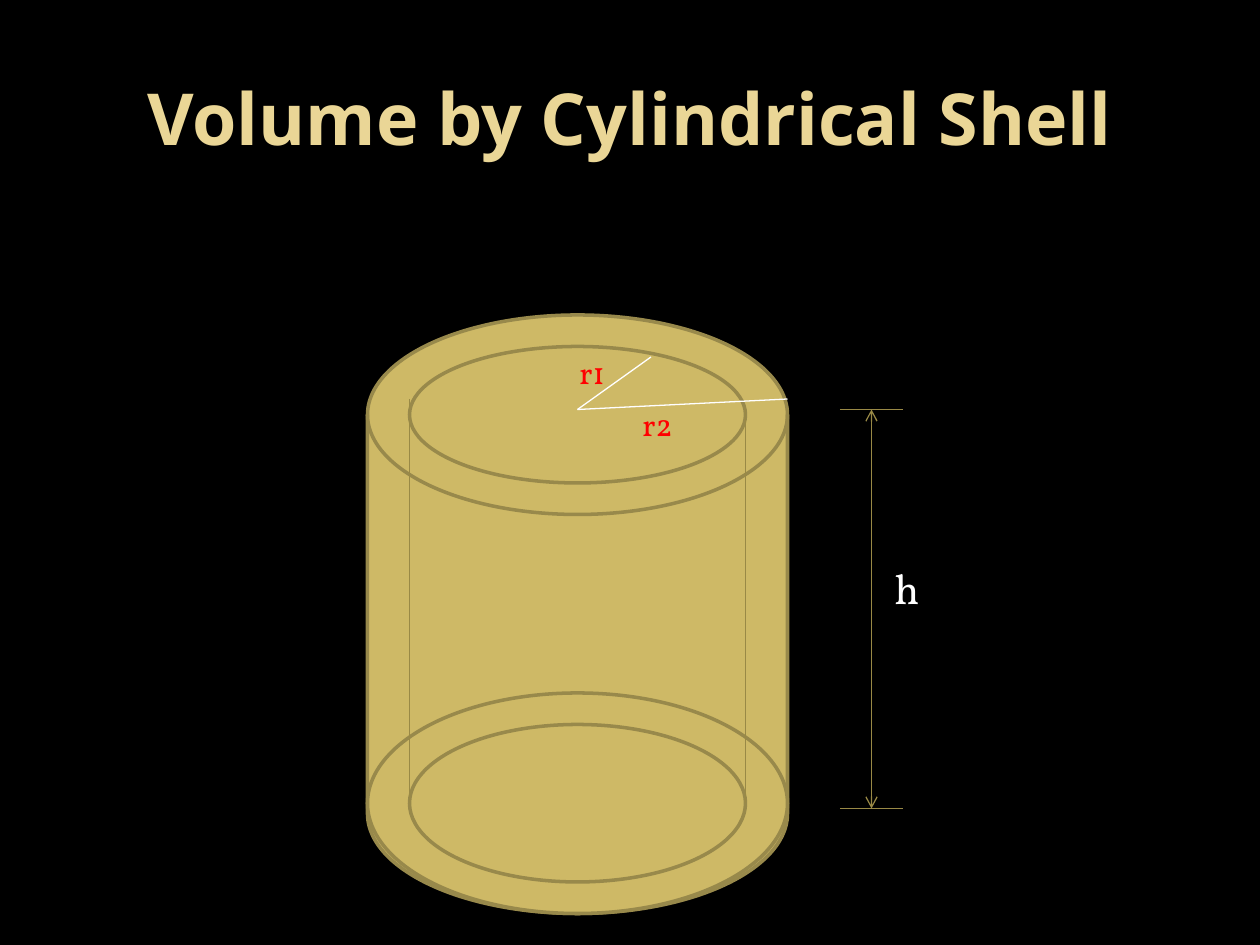
from lxml import etree
from pptx import Presentation
from pptx import util as u
from pptx.dml import color
from pptx.enum import shapes, text
from pptx.oxml import ns

Pt = u.Pt
COLORS = {
    "background": "000000",
    "title": "EAD696",
    "body": "CEB966",
    "outline": "98894B",
    "guide": "998946",
    "white": "FFFFFF",
    "radius": "FF0000",
}


def rgb(name):
    return color.RGBColor.from_string(COLORS[name])


def style_text(frame, size, font_name, color_name, bold=False):
    for paragraph in frame.paragraphs:
        for run in paragraph.runs:
            run.font.size = Pt(size)
            run.font.name = font_name
            run.font.bold = bold
            run.font.color.rgb = rgb(color_name)


def add_solid(slide, kind, left, top, width, height):
    shape = slide.shapes.add_shape(kind, Pt(left), Pt(top), Pt(width), Pt(height))
    shape.shadow.inherit = False
    shape.fill.solid()
    shape.fill.fore_color.rgb = rgb("body")
    shape.line.color.rgb = rgb("outline")
    shape.line.width = Pt(2)


def add_line(slide, start, end, color_name="guide", arrows=False):
    connector = slide.shapes.add_connector(
        shapes.MSO_CONNECTOR.STRAIGHT, *(Pt(value) for value in (*start, *end)))
    connector.line.color.rgb = rgb(color_name)
    connector.line.width = Pt(0.75)
    properties = connector._element.spPr
    if arrows:
        line = properties.find(ns.qn("a:ln"))
        for tag in ("a:headEnd", "a:tailEnd"):
            etree.SubElement(line, ns.qn(tag), type="arrow")
    etree.SubElement(properties, ns.qn("a:effectLst"))


def add_label(slide, words, left, top, width, height, size, color_name):
    box = slide.shapes.add_textbox(Pt(left), Pt(top), Pt(width), Pt(height))
    frame = box.text_frame
    frame.word_wrap = True
    frame.auto_size = text.MSO_AUTO_SIZE.SHAPE_TO_FIT_TEXT
    frame.text = words
    style_text(frame, size, "Vollkorn", color_name)


def place_title(slide, left, top, width, height):
    title = slide.shapes.title
    title.left, title.top = Pt(left), Pt(top)
    title.width, title.height = Pt(width), Pt(height)
    frame = title.text_frame
    frame.text = "Volume by Cylindrical Shell"
    frame.vertical_anchor = text.MSO_ANCHOR.MIDDLE
    frame.paragraphs[0].alignment = text.PP_ALIGN.CENTER
    style_text(frame, 41, "Noto Sans", "title", bold=True)


def place_cylinder(slide, left, top, width, height):
    ellipse = shapes.MSO_SHAPE.OVAL
    wall, rim, base_height = 24, 18, 126
    inner_left, inner_right = left + wall, left + width - wall
    inner_width = inner_right - inner_left
    base_top = top + height - base_height

    add_solid(slide, shapes.MSO_SHAPE.FLOWCHART_MAGNETIC_DISK, left, top, width, height)
    add_solid(slide, ellipse, inner_left, top + rim, inner_width, 78)
    add_line(slide, (inner_right, top + 54), (inner_right, top + 276))
    add_line(slide, (inner_left, top + 48), (inner_left, top + 270))
    add_solid(slide, ellipse, left, base_top, width, base_height)
    add_solid(slide, ellipse, inner_left, base_top + rim, inner_width, base_height - 2 * rim)
    add_line(slide, (inner_left, base_top + 18), (inner_left, base_top + 63))
    add_line(slide, (inner_right, base_top + 24), (inner_right, base_top + 63))


def place_height_mark(slide, left, top, width, height):
    middle, bottom = left + width / 2, top + height
    add_line(slide, (middle, top), (middle, bottom), arrows=True)
    for level in (top, bottom):
        add_line(slide, (left, level), (left + width, level))
    add_label(slide, "h", middle + 6, top + 84, 54, 36, 24, "white")


def place_radii(slide, left, top, width, height):
    center = (left, top + height)
    add_line(slide, center, (left + 42, top), "white")
    add_line(slide, center, (left + width, top + 24), "white")
    add_label(slide, "r1", left - 6, top - 6, 48, 29, 18, "radius")
    add_label(slide, "r2", left + 30, top + 24, 36, 29, 18, "radius")


def main():
    presentation = Presentation()
    presentation.slide_width, presentation.slide_height = Pt(720), Pt(540)
    slide = presentation.slides.add_slide(presentation.slide_layouts[5])
    slide.background.fill.solid()
    slide.background.fill.fore_color.rgb = rgb("background")
    place_title(slide, 36, 21.6, 648, 90)
    place_cylinder(slide, 210, 180, 240, 342)
    place_height_mark(slide, 480, 234, 36, 228)
    place_radii(slide, 330, 204, 120, 30)
    presentation.save("out.pptx")


if __name__ == "__main__":
    main()
